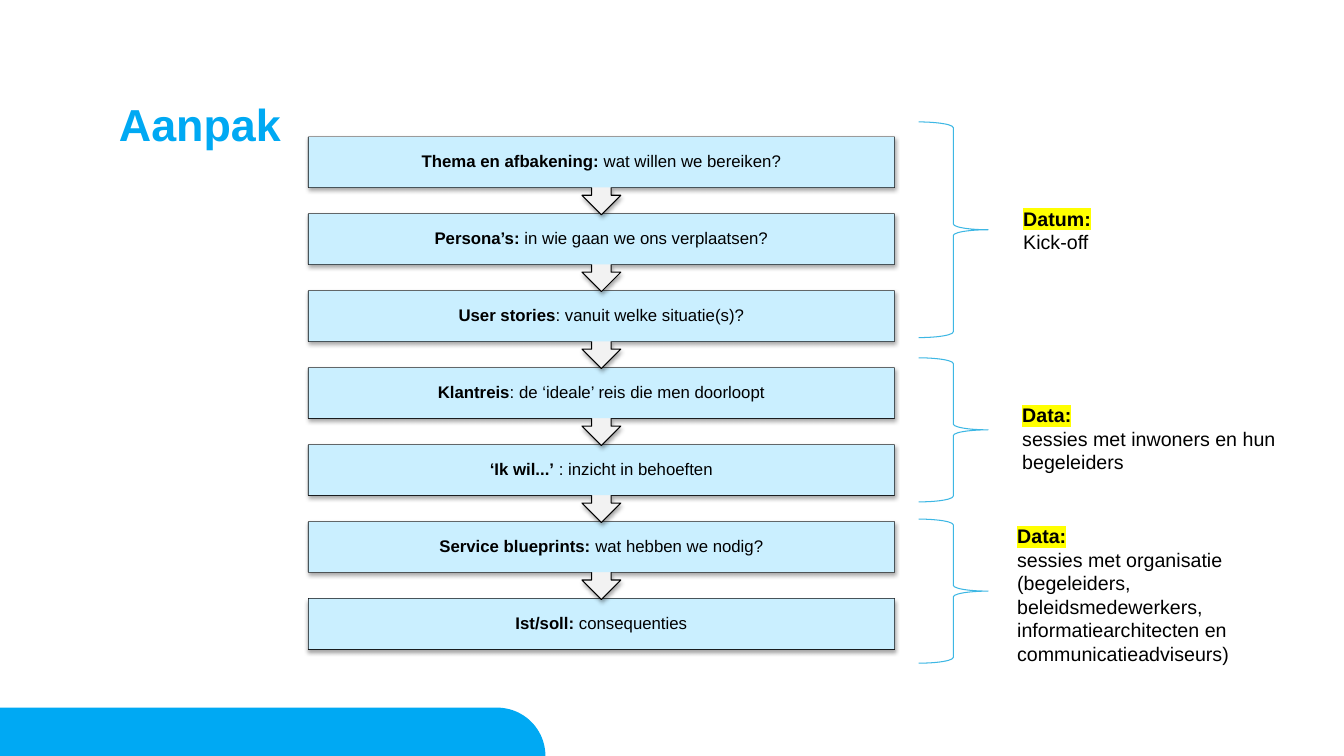
import math
from lxml import etree
from pptx import Presentation
from pptx import util as u
from pptx.dml import color as c
from pptx.enum import shapes, text
from pptx.oxml import ns


def rgb(value):
    return c.RGBColor.from_string(value)


def write(paragraph, content, size=14, color="000000", bold=False, highlight=None):
    run = paragraph.add_run()
    run.text = content
    run.font.size = u.Pt(size)
    run.font.bold = bold
    run.font.color.rgb = rgb(color)
    if highlight:
        mark = etree.Element(ns.qn("a:highlight"))
        etree.SubElement(mark, ns.qn("a:srgbClr"), val=highlight)
        run.font._element.find(ns.qn("a:solidFill")).addnext(mark)
    run.font.name = "Arial"


presentation = Presentation()
presentation.slide_width = u.Inches(13.33)
presentation.slide_height = u.Inches(7.5)
slide = presentation.slides.add_slide(presentation.slide_layouts[6])

bar_top, bar_bottom, bar_right = 7.02, 7.5, 5.41
radius = bar_bottom - bar_top
outline = [(0, bar_top)]
for step in range(25):
    angle = math.pi / 2 * step / 24
    outline.append((bar_right - radius + radius * math.sin(angle),
                    bar_bottom - radius * math.cos(angle)))
outline.append((0, bar_bottom))
builder = slide.shapes.build_freeform(0, u.Inches(bar_bottom), scale=1.0)
builder.add_line_segments([(u.Inches(x), u.Inches(y)) for x, y in outline])
footer_bar = builder.convert_to_shape()
footer_bar.shadow.inherit = False
footer_bar.fill.solid()
footer_bar.fill.fore_color.rgb = rgb("00A9F3")
footer_bar.line.fill.background()

title = slide.shapes.add_textbox(u.Inches(1.18), u.Inches(1.02), u.Inches(10.97), u.Inches(0.58))
frame = title.text_frame
frame.word_wrap = True
frame.margin_left = frame.margin_right = frame.margin_top = frame.margin_bottom = 0
frame.paragraphs[0].line_spacing = 0.9
write(frame.paragraphs[0], "Aanpak", size=32, color="00A9F3", bold=True)

steps = [
    ("Thema en afbakening: ", "wat willen we bereiken?"),
    ("Persona’s:", " in wie gaan we ons verplaatsen?"),
    ("User stories", ": vanuit welke situatie(s)?"),
    ("Klantreis", ": de ‘ideale’ reis die men doorloopt"),
    ("‘Ik wil...’", " : inzicht in behoeften"),
    ("Service blueprints: ", "wat hebben we nodig?"),
    ("Ist/soll: ", "consequenties"),
]
first_top, last_top = 1.36, 5.94
pitch = (last_top - first_top) / (len(steps) - 1)
left, width, box_height = u.Inches(3.06), u.Inches(5.81), u.Inches(0.5)

for index, (name, question) in reversed(list(enumerate(steps))):
    top = u.Inches(first_top + index * pitch)
    if index == len(steps) - 1:
        frame_shape = slide.shapes.add_shape(
            shapes.MSO_SHAPE.RECTANGLE, left, top, width, box_height)
    else:
        frame_shape = slide.shapes.add_shape(
            shapes.MSO_SHAPE.DOWN_ARROW_CALLOUT, left, top, width, u.Inches(0.77))
        for position, value in enumerate((0.25, 0.25, 0.25, 0.65)):
            frame_shape.adjustments[position] = value
    frame_shape.fill.solid()
    frame_shape.fill.fore_color.rgb = rgb("F2F2F2")
    frame_shape.line.color.rgb = rgb("000000")
    frame_shape.line.width = u.Pt(0.75)
    frame_shape.shadow.inherit = False
    effects = frame_shape._element.spPr.find(ns.qn("a:effectLst"))
    shadow = etree.SubElement(effects, ns.qn("a:outerShdw"), blurRad=str(u.Pt(3.1)),
                              dist=str(u.Pt(1.8)), dir="5400000", rotWithShape="0")
    shade = etree.SubElement(shadow, ns.qn("a:srgbClr"), val="000000")
    etree.SubElement(shade, ns.qn("a:alpha"), val="35000")

    box = slide.shapes.add_shape(shapes.MSO_SHAPE.RECTANGLE, left, top, width, box_height)
    box.shadow.inherit = False
    box.fill.solid()
    box.fill.fore_color.rgb = rgb("CAEFFF")
    box.line.fill.background()
    frame = box.text_frame
    frame.word_wrap = True
    frame.vertical_anchor = text.MSO_ANCHOR.MIDDLE
    frame.margin_left = frame.margin_right = u.Inches(0.09)
    frame.margin_top = frame.margin_bottom = u.Inches(0.09)
    paragraph = frame.paragraphs[0]
    paragraph.alignment = text.PP_ALIGN.CENTER
    paragraph.line_spacing = 0.9
    write(paragraph, name, size=12, bold=True)
    write(paragraph, question, size=12)

phases = [
    (1.21, 2.14, (10.05, 2, 1.42, 0.57), "Datum:", "Kick-off"),
    (3.55, 1.43, (10.04, 3.95, 2.78, 0.81), "Data:",
     "sessies met inwoners en hun begeleiders"),
    (5.15, 1.43, (9.99, 5.15, 3.13, 1.51), "Data:",
     "sessies met organisatie (begeleiders, beleidsmedewerkers, "
     "informatiearchitecten en communicatieadviseurs)"),
]
for brace_top, brace_height, note_place, heading, description in phases:
    brace = slide.shapes.add_shape(shapes.MSO_SHAPE.RIGHT_BRACE, u.Inches(9.11),
                                   u.Inches(brace_top), u.Inches(0.69), u.Inches(brace_height))
    brace.shadow.inherit = False
    brace.fill.background()
    brace.line.color.rgb = rgb("3DB7E4")
    brace.line.width = u.Pt(0.75)

    note = slide.shapes.add_textbox(*[u.Inches(length) for length in note_place])
    frame = note.text_frame
    frame.word_wrap = True
    frame.auto_size = text.MSO_AUTO_SIZE.SHAPE_TO_FIT_TEXT
    write(frame.paragraphs[0], heading, bold=True, highlight="FFFF00")
    write(frame.add_paragraph(), description)

presentation.save("out.pptx")
